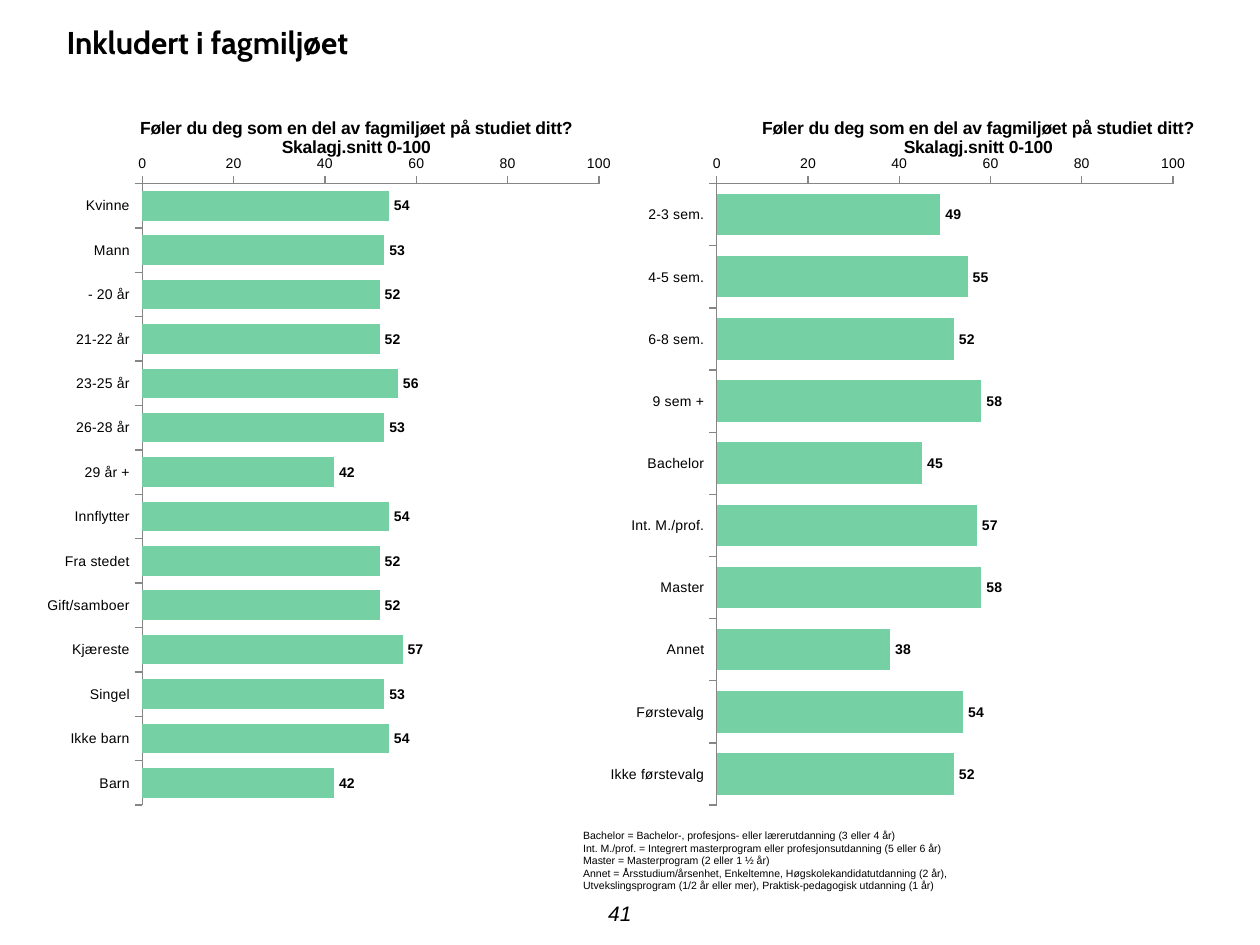
from dataclasses import dataclass

from pptx import Presentation
from pptx.chart.data import CategoryChartData
from pptx.dml.color import RGBColor
from pptx.enum.chart import XL_CHART_TYPE, XL_LABEL_POSITION, XL_TICK_MARK
from pptx.enum.text import MSO_ANCHOR, PP_ALIGN
from pptx.oxml import parse_xml
from pptx.oxml.ns import nsdecls, qn
from pptx.util import Inches, Pt


@dataclass(frozen=True)
class Theme:
    """Colours, fonts and type sizes of the slide."""
    ink: RGBColor = RGBColor(0, 0, 0)
    bar: RGBColor = RGBColor(0x75, 0xD1, 0xA3)
    axis: RGBColor = RGBColor(0x86, 0x86, 0x86)
    heading_font: str = "Cabin"
    body_font: str = "Arial"
    heading: Pt = Pt(18)
    page_number: Pt = Pt(12)
    chart_title: Pt = Pt(10)
    label: Pt = Pt(8)
    note: Pt = Pt(6)


THEME = Theme()
QUESTION = ["Føler du deg som en del av fagmiljøet på studiet ditt?", "Skalagj.snitt 0-100"]
BACKGROUND = {
    "Kvinne": 54, "Mann": 53, "- 20 år": 52, "21-22 år": 52, "23-25 år": 56,
    "26-28 år": 53, "29 år +": 42, "Innflytter": 54, "Fra stedet": 52,
    "Gift/samboer": 52, "Kjæreste": 57, "Singel": 53, "Ikke barn": 54, "Barn": 42,
}
STUDIES = {
    "2-3 sem.": 49, "4-5 sem.": 55, "6-8 sem.": 52, "9 sem +": 58, "Bachelor": 45,
    "Int. M./prof.": 57, "Master": 58, "Annet": 38, "Førstevalg": 54, "Ikke førstevalg": 52,
}
DEFINITIONS = [
    "Bachelor = Bachelor-, profesjons- eller lærerutdanning (3 eller 4 år)",
    "Int. M./prof. = Integrert masterprogram eller profesjonsutdanning (5 eller 6 år)",
    "Master = Masterprogram (2 eller 1 ½ år)",
    "Annet = Årsstudium/årsenhet, Enkeltemne, Høgskolekandidatutdanning (2 år), "
    "Utvekslingsprogram (1/2 år eller mer), Praktisk-pedagogisk utdanning (1 år)",
]


def style_font(font, size, name=THEME.body_font, bold=False, italic=False):
    """Set the look of a font."""
    font.size, font.name, font.bold, font.italic = size, name, bold, italic
    font.color.rgb = THEME.ink


def add_text(slide, box, lines, size, align=PP_ALIGN.LEFT, anchor=MSO_ANCHOR.TOP,
             wrap=True, **look):
    """Place paragraphs of one style in a box."""
    frame = slide.shapes.add_textbox(*map(Inches, box)).text_frame
    frame.word_wrap = wrap
    frame.vertical_anchor = anchor
    frame.text = "\n".join(lines)
    for paragraph in frame.paragraphs:
        paragraph.alignment = align
        for run in paragraph.runs:
            style_font(run.font, size, **look)


def set_layout(parent, index, target="", **fractions):
    """Give a chart part a manual layout in fractions of the chart."""
    for old in parent.findall(qn("c:layout")):
        parent.remove(old)
    inner = f'<c:layoutTarget val="{target}"/>' if target else ""
    modes = "".join(f'<c:{axis}Mode val="edge"/>' for axis in "xy")
    values = "".join(f'<c:{key} val="{value}"/>' for key, value in fractions.items())
    parent.insert(index, parse_xml(
        f'<c:layout {nsdecls("c")}><c:manualLayout>{inner}{modes}{values}'
        "</c:manualLayout></c:layout>"))


def style_axis(axis):
    """Give an axis its line, outer ticks and small labels."""
    axis.has_major_gridlines = False
    axis.major_tick_mark = XL_TICK_MARK.OUTSIDE
    axis.minor_tick_mark = XL_TICK_MARK.NONE
    axis.format.line.color.rgb = THEME.axis
    axis.format.line.width = Pt(0.75)
    style_font(axis.tick_labels.font, THEME.label)


def add_score_chart(slide, box, scores, title_left):
    """Place a bar chart of mean scores from 0 to 100 in a box."""
    data = CategoryChartData(number_format="0")
    data.categories = list(scores)
    data.add_series("Series 1", list(scores.values()))
    chart = slide.shapes.add_chart(
        XL_CHART_TYPE.BAR_CLUSTERED, *map(Inches, box), data).chart
    chart.has_legend = False
    style_font(chart.font, THEME.label)

    title = chart.chart_title
    title.text_frame.text = "\n".join(QUESTION)
    for paragraph in title.text_frame.paragraphs:
        paragraph.alignment = PP_ALIGN.CENTER
        for run in paragraph.runs:
            style_font(run.font, THEME.chart_title, bold=True)
    set_layout(title._element, 1, x=title_left, y=0.04)
    set_layout(chart._chartSpace.chart.plotArea, 0, "inner", x=0.18, y=0.135, w=0.768, h=0.825)

    style_axis(chart.category_axis)
    chart.category_axis.reverse_order = True
    value_axis = chart.value_axis
    style_axis(value_axis)
    value_axis.minimum_scale, value_axis.maximum_scale, value_axis.major_unit = 0, 100, 20
    value_axis.tick_labels.number_format = "0"
    value_axis.tick_labels.number_format_is_linked = False

    plot = chart.plots[0]
    plot.gap_width = 50
    plot.vary_by_categories = False
    bars = plot.series[0]
    bars.format.fill.solid()
    bars.format.fill.fore_color.rgb = THEME.bar
    labels = bars.data_labels
    labels.show_value = True
    labels.position = XL_LABEL_POSITION.OUTSIDE_END
    labels.number_format = "0"
    labels.number_format_is_linked = False
    style_font(labels.font, THEME.label, bold=True)


def build_slide(presentation):
    """Compose the slide from its heading, charts, definitions and page number."""
    slide = presentation.slides.add_slide(presentation.slide_layouts[6])
    add_text(slide, (0.43, 0.13, 9.17, 0.4), ["Inkludert i fagmiljøet"], THEME.heading,
             name=THEME.heading_font, bold=True)
    add_score_chart(slide, (0.28, 0.65, 4.72, 5.98), BACKGROUND, 0.17)
    add_score_chart(slide, (4.84, 0.65, 4.72, 5.98), STUDIES, 0.25)
    add_text(slide, (4.53, 6.53, 3.15, 0.61), DEFINITIONS, THEME.note)
    add_text(slide, (4.64, 7.08, 0.56, 0.33), ["41"], THEME.page_number, PP_ALIGN.CENTER,
             MSO_ANCHOR.MIDDLE, wrap=False, italic=True)


def main():
    """Build and save the presentation."""
    presentation = Presentation()
    presentation.slide_width, presentation.slide_height = Inches(10), Inches(7.5)
    build_slide(presentation)
    presentation.save("out.pptx")


if __name__ == "__main__":
    main()
